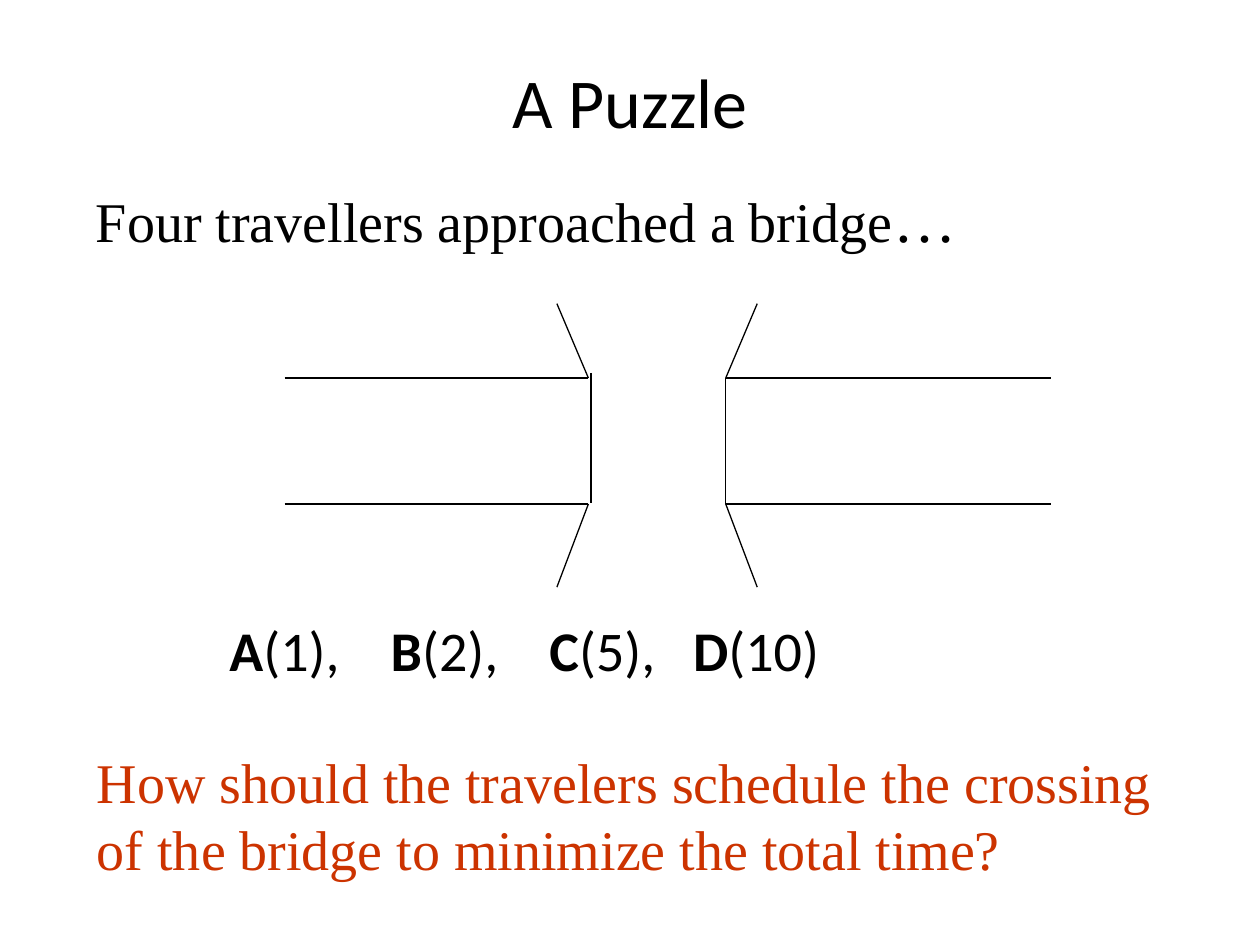
from dataclasses import dataclass
from typing import NamedTuple

from lxml.etree import SubElement
from pptx import Presentation
from pptx.dml.color import RGBColor
from pptx.enum.shapes import MSO_CONNECTOR as Connector
from pptx.enum.text import MSO_ANCHOR as Anchor, PP_ALIGN as Align
from pptx.oxml.ns import qn
from pptx.util import Inches, Pt


@dataclass(frozen=True)
class Theme:
    ink: RGBColor = RGBColor(0x00, 0x00, 0x00)
    paper: RGBColor = RGBColor(0xFF, 0xFF, 0xFF)
    accent: RGBColor = RGBColor(0xCC, 0x33, 0x00)
    sans: str = "Calibri"
    serif: str = "Times New Roman"
    title_size: float = 40
    ellipsis_size: float = 36
    body_size: float = 32
    stroke: float = 0.75


class Span(NamedTuple):
    text: str
    bold: bool = False
    size: float | None = None


class Stroke(NamedTuple):
    start: tuple[float, float]
    end: tuple[float, float]
    color: RGBColor


class Traveller(NamedTuple):
    name: str
    minutes: int


THEME = Theme()
ROAD_TOP, ROAD_BOTTOM = 3, 4
LEFT_BANK, RIGHT_BANK = 4.67, 5.76
LEFT_END, RIGHT_END = 2.26, 8.34
SHORE_TOP, SHORE_BOTTOM = 2.41, 4.66
LEFT_SHORE, RIGHT_SHORE = 4.42, 6.01
TRAVELLERS = [Traveller("A", 1), Traveller("B", 2), Traveller("C", 5), Traveller("D", 10)]
TRAVELLER_TABS = [1.28, 2.54, 3.68]


def add_text(slide, lines: list[list[Span]], *, left: float, top: float, width: float,
             height: float, size: float = THEME.body_size, font: str = THEME.sans,
             color: RGBColor = THEME.ink, align: Align = Align.LEFT,
             anchor: Anchor = Anchor.TOP, spacing: float = 1.0, wrap: bool = True,
             inset: float = 0.1, tabs: tuple | list = ()) -> None:
    """Add a text box with one paragraph for each line of spans."""
    box = slide.shapes.add_textbox(Inches(left), Inches(top), Inches(width), Inches(height))
    frame = box.text_frame
    frame.word_wrap, frame.vertical_anchor = wrap, anchor
    frame.margin_left = Inches(inset)
    for index, spans in enumerate(lines):
        para = frame.paragraphs[0] if index == 0 else frame.add_paragraph()
        para.alignment, para.line_spacing = align, spacing
        if tabs:
            tab_list = SubElement(para._p.get_or_add_pPr(), qn("a:tabLst"))
            for position in tabs:
                SubElement(tab_list, qn("a:tab"), pos=str(Inches(position)), algn="l")
        for span in spans:
            run = para.add_run()
            run.text = span.text
            run.font.name, run.font.size = font, Pt(span.size or size)
            run.font.bold, run.font.color.rgb = span.bold, color


def add_stroke(slide, stroke: Stroke) -> None:
    """Add a thin straight line without a shadow."""
    ends = [Inches(value) for value in (*stroke.start, *stroke.end)]
    line = slide.shapes.add_connector(Connector.STRAIGHT, *ends)
    line.line.color.rgb, line.line.width = stroke.color, Pt(THEME.stroke)
    SubElement(line._element.spPr, qn("a:effectLst"))


def draw_bridge(slide) -> None:
    """Draw the roads, the banks and the flaring shores."""
    strokes = [Stroke((LEFT_BANK, ROAD_TOP), (LEFT_BANK, ROAD_BOTTOM), THEME.paper)]
    for start, end in ((LEFT_END, LEFT_BANK), (RIGHT_BANK, RIGHT_END)):
        for road in (ROAD_TOP, ROAD_BOTTOM):
            strokes.append(Stroke((start, road), (end, road), THEME.ink))
    for bank, shore in ((LEFT_BANK, LEFT_SHORE), (RIGHT_BANK, RIGHT_SHORE)):
        for road, tip in ((ROAD_TOP, SHORE_TOP), (ROAD_BOTTOM, SHORE_BOTTOM)):
            strokes.append(Stroke((bank, road), (shore, tip), THEME.ink))
    strokes.append(Stroke((RIGHT_BANK, ROAD_TOP), (RIGHT_BANK, ROAD_BOTTOM), THEME.ink))
    strokes.append(Stroke((4.69, 2.96), (4.69, 3.99), THEME.ink))
    for stroke in strokes:
        add_stroke(slide, stroke)


def traveller_spans(travellers: list[Traveller]) -> list[Span]:
    """Return bold names with their times, separated by tabs."""
    spans = []
    for traveller in travellers:
        ending = "" if traveller is travellers[-1] else ",\t"
        spans += [Span(traveller.name, bold=True), Span(f"({traveller.minutes}){ending}")]
    return spans


def main() -> None:
    """Build the puzzle slide and save the deck."""
    deck = Presentation()
    deck.slide_width, deck.slide_height = Inches(10), Inches(7.5)
    page = deck.slides.add_slide(deck.slide_layouts[6])
    draw_bridge(page)
    add_text(page, [traveller_spans(TRAVELLERS)], left=1.34, top=4.92, width=7.05,
             height=0.61, spacing=0.85, inset=0.48, tabs=TRAVELLER_TABS)
    add_text(page, [[Span("Four travellers approached a bridge"),
                     Span("…", size=THEME.ellipsis_size)]],
             left=0.25, top=1.42, width=7.85, height=0.67, font=THEME.serif,
             align=Align.CENTER, spacing=0.95)
    add_text(page, [[Span("How should the travelers schedule the crossing")],
                    [Span("of the bridge to minimize the total time?")]],
             left=0.67, top=5.88, width=8.69, height=1.17, font=THEME.serif,
             color=THEME.accent, wrap=False)
    add_text(page, [[Span("A Puzzle")]], left=0, top=0.42, width=10, height=0.75,
             size=THEME.title_size, align=Align.CENTER, anchor=Anchor.MIDDLE)
    deck.save("out.pptx")


if __name__ == "__main__":
    main()
